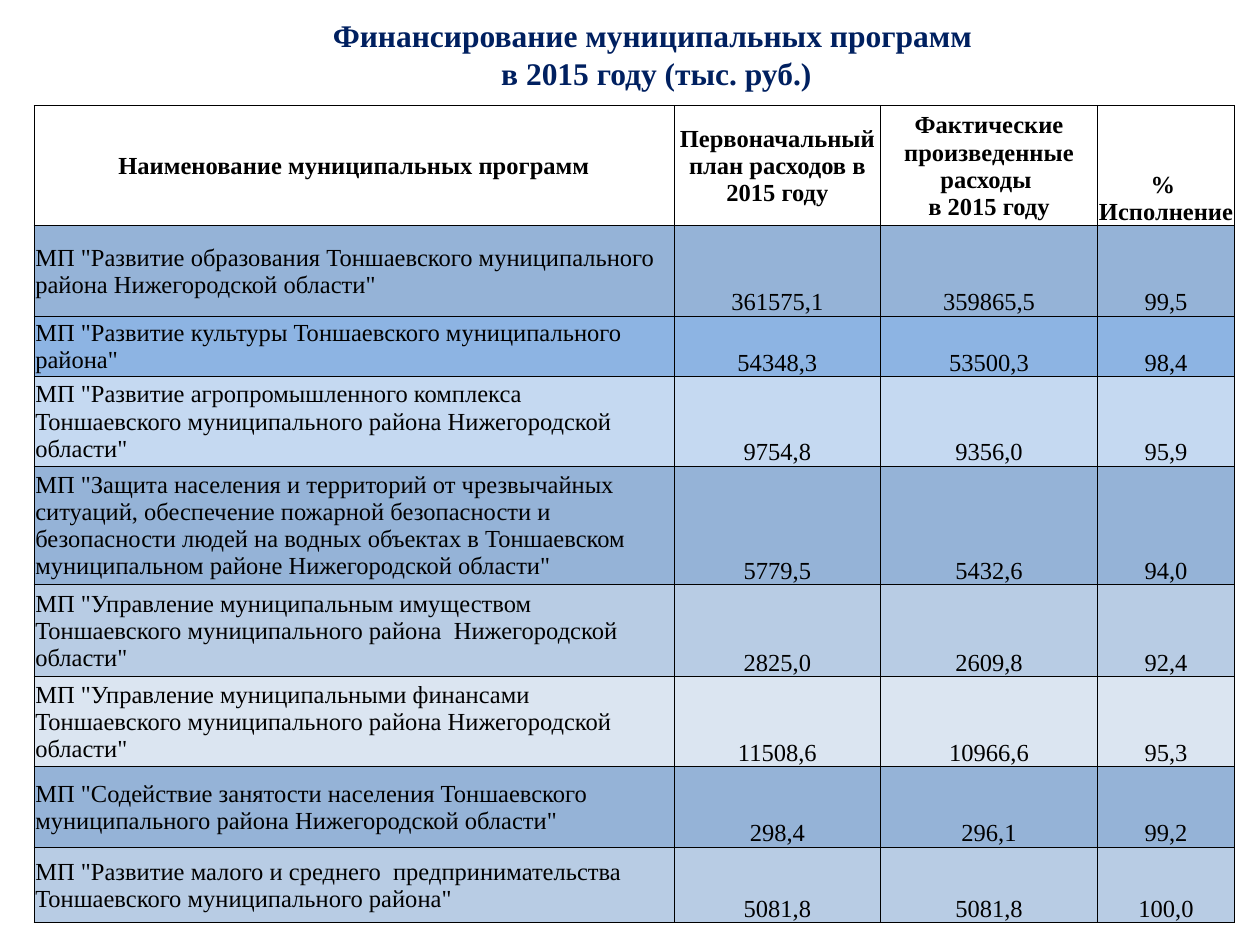
from dataclasses import dataclass

from lxml.etree import SubElement
from pptx import Presentation
from pptx.dml.color import RGBColor as RGB
from pptx.enum.text import MSO_ANCHOR as ANCHOR, MSO_AUTO_SIZE as AUTO, PP_ALIGN as ALIGN
from pptx.oxml.ns import qn
from pptx.util import Inches, Pt


@dataclass(frozen=True)
class Theme:
    font: str = "Times New Roman"
    title_size: int = 18
    cell_size: int = 14
    title: str = "002060"
    ink: str = "000000"
    blue: str = "95B3D7"
    bright: str = "8DB4E3"
    sky: str = "C5D9F1"
    steel: str = "B8CCE4"
    pale: str = "DBE5F1"
    border: float = 0.5


T = Theme()

TITLE = ["Финансирование муниципальных программ ", "в 2015 году (тыс. руб.)"]
HEADER = [
    ["Наименование муниципальных программ"],
    ["Первоначальный план расходов в 2015 году"],
    ["Фактические произведенные расходы ", "в 2015 году"],
    ["% ", "Исполнение "],
]
HEADER_HEIGHT = 0.95
COLUMNS = [5.08, 1.64, 1.72, 1.09]

# Row height, fill, programme, plan, actual, percent
PROGRAMMES = [
    (0.72, T.blue, 'МП "Развитие образования Тоншаевского муниципального района '
     'Нижегородской области"', "361575,1", "359865,5", "99,5"),
    (0.47, T.bright, 'МП "Развитие культуры Тоншаевского муниципального района"',
     "54348,3", "53500,3", "98,4"),
    (0.71, T.sky, 'МП "Развитие агропромышленного комплекса Тоншаевского '
     'муниципального района Нижегородской области"', "9754,8", "9356,0", "95,9"),
    (0.94, T.blue, 'МП "Защита населения и территорий от чрезвычайных ситуаций, '
     'обеспечение пожарной безопасности и безопасности людей на водных объектах '
     'в Тоншаевском муниципальном районе Нижегородской области"',
     "5779,5", "5432,6", "94,0"),
    (0.73, T.steel, 'МП "Управление муниципальным имуществом Тоншаевского '
     'муниципального района  Нижегородской области"', "2825,0", "2609,8", "92,4"),
    (0.71, T.pale, 'МП "Управление муниципальными финансами Тоншаевского '
     'муниципального района Нижегородской области"', "11508,6", "10966,6", "95,3"),
    (0.64, T.blue, 'МП "Содействие занятости населения Тоншаевского '
     'муниципального района Нижегородской области"', "298,4", "296,1", "99,2"),
    (0.6, T.steel, 'МП "Развитие малого и среднего  предпринимательства '
     'Тоншаевского муниципального района"', "5081,8", "5081,8", "100,0"),
]


def write(tf, lines, size=T.cell_size, color=T.ink, bold=False, align=ALIGN.CENTER):
    """Fill a text frame with one paragraph per line."""
    for i, line in enumerate(lines):
        p = tf.paragraphs[0] if i == 0 else tf.add_paragraph()
        p.alignment = align
        r = p.add_run()
        r.text = line
        r.font.name, r.font.size, r.font.bold = T.font, Pt(size), bold
        r.font.color.rgb = RGB.from_string(color)


def add_title(slide):
    sp = slide.shapes.title
    sp.left, sp.top, sp.width, sp.height = map(Inches, (1.46, 0.13, 7.5, 0.61))
    tf = sp.text_frame
    tf.margin_left = tf.margin_right = tf.margin_top = tf.margin_bottom = 0
    tf.word_wrap, tf.auto_size = True, AUTO.SHAPE_TO_FIT_TEXT
    tf.vertical_anchor = ANCHOR.TOP
    write(tf, TITLE, size=T.title_size, color=T.title, bold=True)


def add_borders(cell):
    tc_pr = cell._tc.get_or_add_tcPr()
    for side in ("a:lnL", "a:lnR", "a:lnT", "a:lnB"):
        ln = SubElement(tc_pr, qn(side), w=str(Pt(T.border)))
        SubElement(SubElement(ln, qn("a:solidFill")), qn("a:srgbClr"), val=T.ink)


def format_cell(cell, lines, fill=None, anchor=ANCHOR.MIDDLE, **text_format):
    cell.margin_left = cell.margin_right = cell.margin_top = Inches(0.01)
    cell.margin_bottom = 0
    cell.vertical_anchor = anchor
    add_borders(cell)
    if fill:
        cell.fill.solid()
        cell.fill.fore_color.rgb = RGB.from_string(fill)
    else:
        cell.fill.background()
    write(cell.text_frame, lines, **text_format)


def add_programme_table(slide):
    heights = [HEADER_HEIGHT] + [row[0] for row in PROGRAMMES]
    frame = slide.shapes.add_table(
        len(heights), len(COLUMNS), Inches(0.27), Inches(0.84),
        Inches(sum(COLUMNS)), Inches(sum(heights)))
    table = frame.table
    table.first_row = table.horz_banding = False
    for col, width in zip(table.columns, COLUMNS):
        col.width = Inches(width)
    for row, height in zip(table.rows, heights):
        row.height = Inches(height)

    # Header: the percent column sits at the bottom
    for c, lines in enumerate(HEADER):
        anchor = ANCHOR.BOTTOM if c == len(HEADER) - 1 else ANCHOR.MIDDLE
        format_cell(table.cell(0, c), lines, anchor=anchor, bold=True)

    # Programme names on the left, figures centred at the bottom
    for r, (_, fill, name, *figures) in enumerate(PROGRAMMES, start=1):
        format_cell(table.cell(r, 0), [name], fill, align=ALIGN.LEFT)
        for c, figure in enumerate(figures, start=1):
            format_cell(table.cell(r, c), [figure], fill, ANCHOR.BOTTOM)


def main():
    prs = Presentation()
    prs.slide_width, prs.slide_height = Inches(10), Inches(7.5)
    slide = prs.slides.add_slide(prs.slide_layouts.get_by_name("Title Only"))
    add_title(slide)
    add_programme_table(slide)
    prs.save("out.pptx")


if __name__ == "__main__":
    main()
